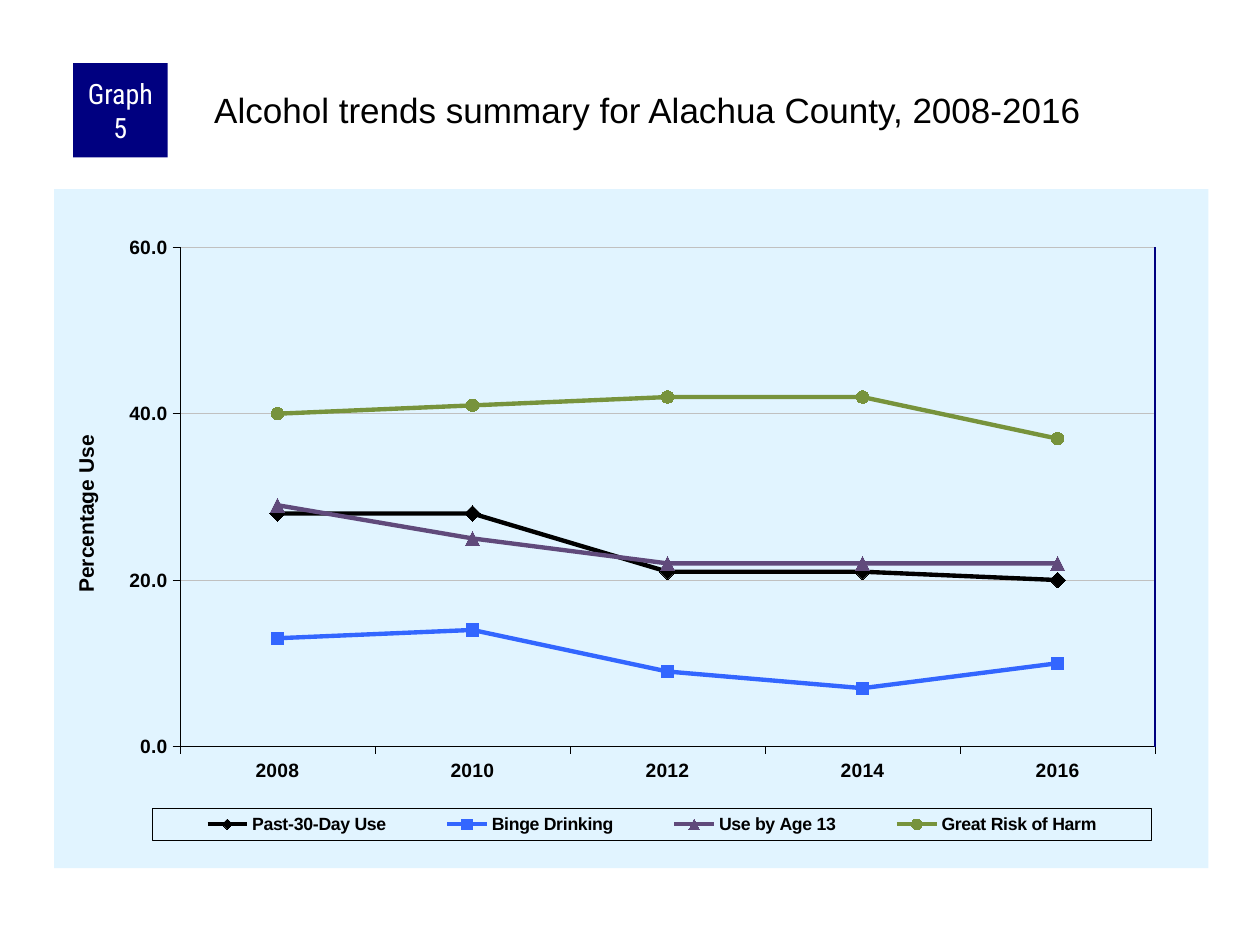
"""Build a slide with a line chart of alcohol trends in Alachua County."""
from lxml import etree
from pptx import Presentation
from pptx.chart.data import CategoryChartData
from pptx.dml.color import RGBColor
from pptx.enum.chart import XL_CHART_TYPE as Kind
from pptx.enum.chart import XL_LEGEND_POSITION as Side
from pptx.enum.chart import XL_MARKER_STYLE as Mark
from pptx.enum.chart import XL_TICK_MARK as Tick
from pptx.enum.shapes import MSO_CONNECTOR as Line
from pptx.enum.shapes import MSO_SHAPE as Shape
from pptx.enum.text import MSO_ANCHOR as Anchor
from pptx.enum.text import MSO_AUTO_SIZE as Fit
from pptx.enum.text import PP_ALIGN as Align
from pptx.oxml import parse_xml
from pptx.oxml.ns import nsdecls, qn
from pptx.util import Inches, Pt

BLACK = RGBColor(0, 0, 0)
WHITE = RGBColor(255, 255, 255)
NAVY = RGBColor(0, 0, 0x80)
PALE = RGBColor(0xE1, 0xF4, 0xFF)
GRID = RGBColor(0xC0, 0xC0, 0xC0)
BLUE = RGBColor(0x33, 0x66, 0xFF)
PLUM = RGBColor(0x60, 0x4A, 0x7B)
GREEN = RGBColor(0x77, 0x93, 0x3C)

YEARS = ["2008", "2010", "2012", "2014", "2016"]
TRENDS = [
    ("Past-30-Day Use", [28, 28, 21, 21, 20], BLACK, Mark.DIAMOND, 9),
    ("Binge Drinking", [13, 14, 9, 7, 10], BLUE, Mark.SQUARE, 7),
    ("Use by Age 13", [29, 25, 22, 22, 22], PLUM, Mark.TRIANGLE, 8),
    ("Great Risk of Harm", [40, 41, 42, 42, 37], GREEN, Mark.CIRCLE, 7),
]


def style(font, size, color, bold=False, name="Arial"):
    font.name, font.size, font.bold = name, Pt(size), bold
    font.color.rgb = color


def place(part, index, inner=False, **shares):
    for old in part.findall(qn("c:layout")):
        part.remove(old)
    layout = parse_xml(f"<c:layout {nsdecls('c')}><c:manualLayout/></c:layout>")
    rules = {"layoutTarget": "inner"} if inner else {}
    rules.update(xMode="edge", yMode="edge", **shares)
    for tag, val in rules.items():
        etree.SubElement(layout[0], qn(f"c:{tag}")).set("val", str(val))
    part.insert(index, layout)


deck = Presentation()
deck.slide_width, deck.slide_height = Inches(10), Inches(7.5)
slide = deck.slides.add_slide(deck.slide_layouts[5])
shapes = slide.shapes

badge = shapes.add_shape(Shape.RECTANGLE, Inches(0.58), Inches(0.5), Inches(0.75), Inches(0.75))
badge.shadow.inherit = False
badge.fill.solid()
badge.fill.fore_color.rgb = NAVY
badge.line.fill.background()
frame = badge.text_frame
frame.text = "Graph 5"
frame.word_wrap = True
frame.vertical_anchor = Anchor.MIDDLE
frame.margin_left = frame.margin_right = Inches(0.05)
frame.margin_top = frame.margin_bottom = 0
frame.paragraphs[0].alignment = Align.CENTER
style(frame.paragraphs[0].runs[0].font, 16, WHITE, name="Roboto Condensed")

title = shapes.title
title.left, title.top = Inches(1.67), Inches(0.67)
title.width, title.height = Inches(7.92), Inches(0.83)
frame = title.text_frame
frame.text = "Alcohol trends summary for Alachua County, 2008-2016"
frame.auto_size = Fit.NONE
frame.vertical_anchor = Anchor.TOP
frame.margin_left = frame.margin_top = Inches(0.03)
frame.margin_right = frame.margin_bottom = 0
frame.paragraphs[0].alignment = Align.LEFT
style(frame.paragraphs[0].runs[0].font, 20, BLACK)

data = CategoryChartData(number_format="0.0")
data.categories = YEARS
for name, vals, *_ in TRENDS:
    data.add_series(name, vals)
left, top, width, height = Inches(0.43), Inches(1.5), Inches(9.16), Inches(5.39)
chart = shapes.add_chart(Kind.LINE_MARKERS, left, top, width, height, data).chart
chart.has_title = False
style(chart.font, 8, BLACK)
chart.plots[0].vary_by_categories = False

for line, (_, _, color, mark, size) in zip(chart.plots[0].series, TRENDS):
    line.smooth = False
    line.format.line.color.rgb = color
    line.format.line.width = Pt(2.5)
    line.marker.style, line.marker.size = mark, size
    line.marker.format.fill.solid()
    line.marker.format.fill.fore_color.rgb = color
    line.marker.format.line.color.rgb = color

years, scale = chart.category_axis, chart.value_axis
for axis in (years, scale):
    axis.major_tick_mark, axis.minor_tick_mark = Tick.OUTSIDE, Tick.NONE
    axis.format.line.color.rgb = BLACK
    axis.format.line.width = Pt(0.25)
    style(axis.tick_labels.font, 11, BLACK, True)
scale.minimum_scale, scale.maximum_scale, scale.major_unit = 0, 60, 20
scale.tick_labels.number_format = "0.0"
scale.tick_labels.number_format_is_linked = False
scale.has_major_gridlines = True
scale.major_gridlines.format.line.color.rgb = GRID
scale.major_gridlines.format.line.width = Pt(0.25)

label = scale.axis_title
label.text_frame.text = "Percentage Use"
style(label.text_frame.paragraphs[0].runs[0].font, 12, BLACK, True)
turn = label._element.find(".//" + qn("a:bodyPr"))
turn.set("rot", "-5400000")
turn.set("vert", "horz")
place(label._element, 1, x=0.013, y=0.357)

chart.has_legend = True
key = chart.legend
key.position, key.include_in_layout = Side.BOTTOM, False
style(key.font, 10.1, BLACK, True)
place(key._element, 1, x=0.085, y=0.912, w=0.866, h=0.047)
key._element.find(qn("c:txPr")).addprevious(parse_xml(
    f'<c:spPr {nsdecls("c", "a")}><a:noFill/><a:ln w="3175"><a:solidFill>'
    f'<a:srgbClr val="{BLACK}"/></a:solidFill></a:ln></c:spPr>'))

root = chart._chartSpace
px, py, pw, ph = 0.109, 0.086, 0.845, 0.735
place(root.chart.plotArea, 0, True, x=px, y=py, w=pw, h=ph)
root.chart.addnext(parse_xml(
    f'<c:spPr {nsdecls("c", "a")}><a:solidFill><a:srgbClr val="{PALE}"/>'
    '</a:solidFill><a:ln><a:noFill/></a:ln></c:spPr>'))

edge = left + int(width * (px + pw))
start, end = (top + int(height * share) for share in (py, py + ph))
side = shapes.add_connector(Line.STRAIGHT, edge, start, edge, end)
side.line.color.rgb = NAVY
side.line.width = Pt(1)
etree.SubElement(side._element.spPr, qn("a:effectLst"))

deck.save("out.pptx")
